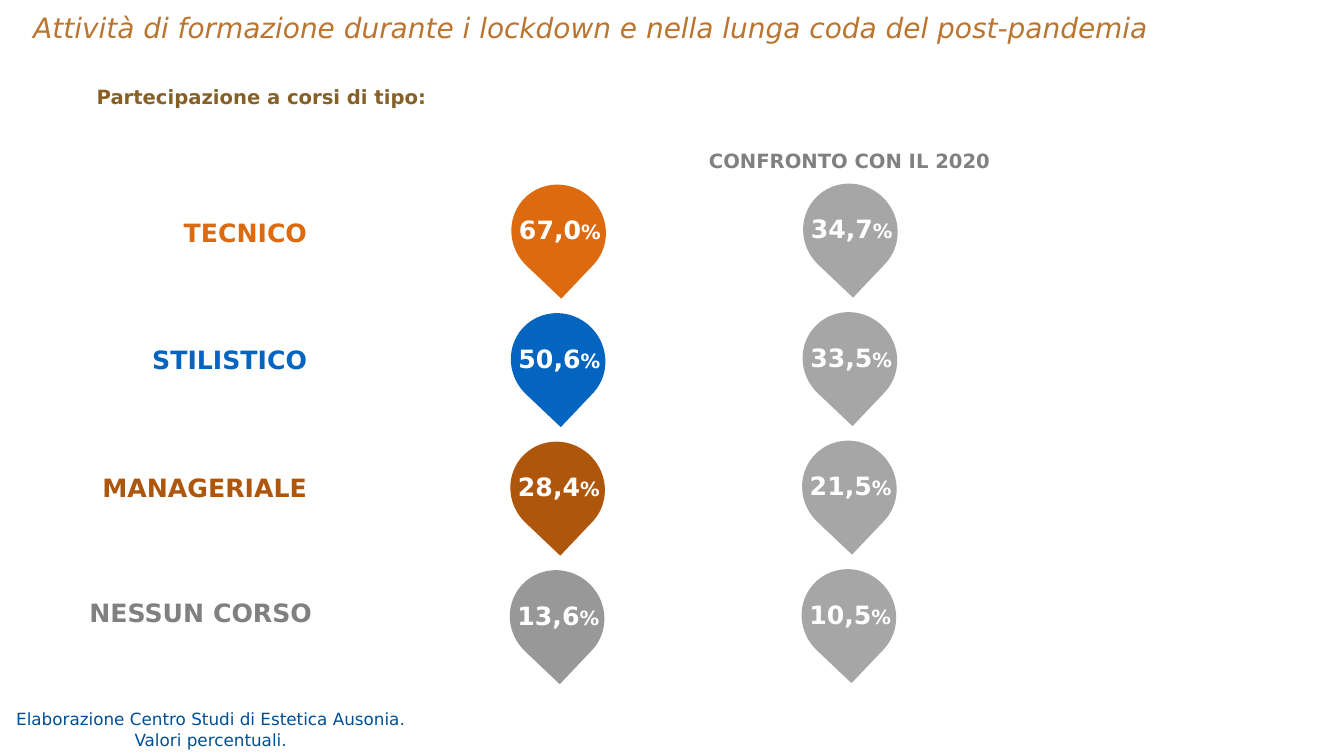
from pptx import Presentation
from pptx.dml.color import RGBColor
from pptx.enum import shapes, text
from pptx.util import Inches, Pt

FONT = "DejaVu Sans"
CENTER, LEFT, RIGHT = text.PP_ALIGN.CENTER, text.PP_ALIGN.LEFT, text.PP_ALIGN.RIGHT
TOP, MIDDLE = text.MSO_ANCHOR.TOP, text.MSO_ANCHOR.MIDDLE
COURSES = [
    ("TECNICO", "DE6A10", "DE6A10", "67,0", "34,7"),
    ("STILISTICO", "0365C0", "0365C0", "50,6", "33,5"),
    ("MANAGERIALE", "AF560D", "AF560D", "28,4", "21,5"),
    ("NESSUN CORSO", "808080", "989898", "13,6", "10,5"),
]
DROP_PITCH = 2.55
LABEL_PITCH = 2.53
DRIFT = 0.01


def rgb(color):
    return RGBColor.from_string(color)


def add_text(parent, box, lines, color, align=CENTER, anchor=MIDDLE,
             insets=(0.06, 0.06), bold=False, italic=False, spacing=None):
    frame = parent.add_textbox(*map(Inches, box)).text_frame
    frame.word_wrap = True
    frame.vertical_anchor = anchor
    frame.margin_left = frame.margin_right = Inches(insets[0])
    frame.margin_top = frame.margin_bottom = Inches(insets[1])
    for index, line in enumerate(lines):
        paragraph = frame.add_paragraph() if index else frame.paragraphs[0]
        paragraph.alignment = align
        if spacing:
            paragraph.line_spacing = spacing
        for words, size in line:
            run = paragraph.add_run()
            run.text = words
            run.font.name = FONT
            run.font.size = Pt(size)
            run.font.bold = bold
            run.font.italic = italic
            run.font.color.rgb = rgb(color)


def add_drop(slide, left, top, value, color):
    group = slide.shapes.add_group_shape().shapes
    drop = group.add_shape(shapes.MSO_SHAPE.TEAR, Inches(left), Inches(top),
                           Inches(1.85), Inches(1.9))
    drop.rotation = 133.5
    drop.shadow.inherit = False
    drop.fill.solid()
    drop.fill.fore_color.rgb = rgb(color)
    drop.line.fill.background()
    add_text(group, (left - 0.12, top + 0.61, 2.14, 0.61),
             [[(value, 36), ("%", 28)]], "FFFFFF", anchor=TOP,
             insets=(0, 0), bold=True)


def add_headings(slide, left, top):
    add_text(slide.shapes, (left, top, 25.44, 0.83),
             [[("Attività di formazione durante i lockdown e nella lunga coda "
                "del post-pandemia", 40)]],
             "BA7530", align=LEFT, italic=True, spacing=1.2)
    add_text(slide.shapes, (left + 0.67, top + 1.55, 7.83, 0.58),
             [[("Partecipazione a corsi di tipo:", 28)]], "876028", bold=True)
    add_text(slide.shapes, (left + 12.8, top + 2.82, 6.91, 0.58),
             [[("CONFRONTO CON IL 2020", 28)]], "808080", bold=True)


def add_courses(slide, left, top):
    for row, (name, name_color, drop_color, current, previous) in enumerate(COURSES):
        insets = (0, 0) if name == "NESSUN CORSO" else (0.1, 0.05)
        add_text(slide.shapes, (left, top + 0.63 + row * LABEL_PITCH, 4.84, 0.71),
                 [[(name, 36)]], name_color, align=RIGHT, anchor=TOP,
                 insets=insets, bold=True)
        drop_top = top + row * DROP_PITCH
        shift = row * DRIFT
        add_drop(slide, left + 8.81 - shift, drop_top + 0.02, current, drop_color)
        add_drop(slide, left + 14.6 - shift, drop_top, previous, "A6A6A6")


def add_source(slide, left, top):
    add_text(slide.shapes, (left, top, 8.42, 0.92),
             [[("Elaborazione Centro Studi di Estetica Ausonia.", 24)],
              [("Valori percentuali.", 24)]], "014F95")


def main():
    deck = Presentation()
    deck.slide_width, deck.slide_height = Inches(26.67), Inches(15)
    slide = deck.slides.add_slide(deck.slide_layouts[6])
    add_headings(slide, 0.6, 0.07)
    add_courses(slide, 1.35, 3.63)
    add_source(slide, -0.03, 14.01)
    deck.save("out.pptx")


if __name__ == "__main__":
    main()
